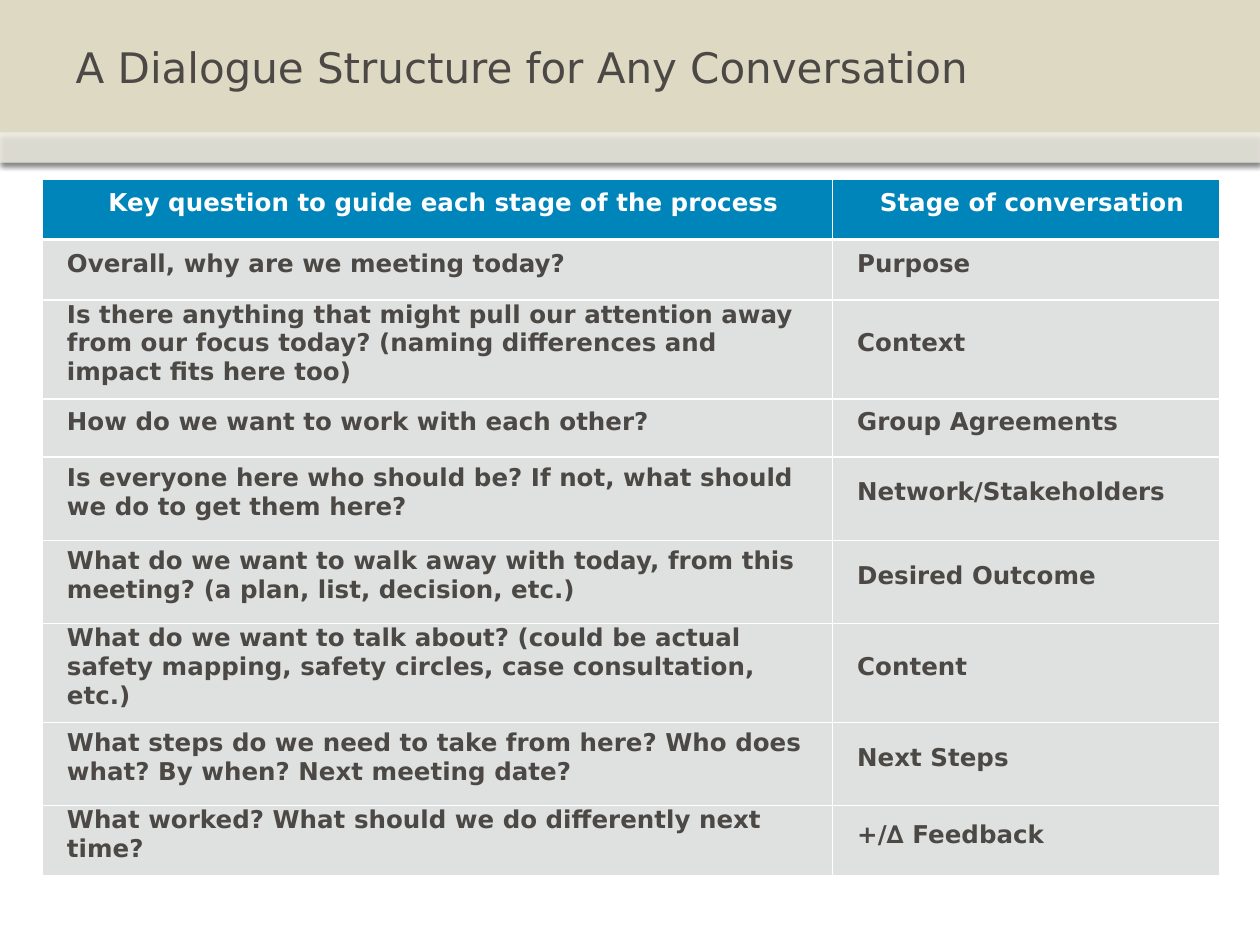
from lxml.etree import SubElement as Sub
from pptx import Presentation as Deck
from pptx.dml.color import RGBColor as Rgb
from pptx.enum.shapes import MSO_SHAPE as Shape
from pptx.enum.text import MSO_ANCHOR as Anchor, PP_ALIGN as Align
from pptx.oxml.ns import qn
from pptx.util import Cm, Pt

FONT = "DejaVu Sans"
HUES = {"sand": "DDD9C3", "white": "FFFFFF", "ink": "4C4845",
        "blue": "0085BA", "grey": "DEE1DF", "shade": "000000"}
COLS = (15.93, 7.8)
ROWS = [
    (1.22, "Key question to guide each stage of the process", "Stage of conversation"),
    (1.22, "Overall, why are we meeting today?", "Purpose"),
    (1.98, "Is there anything that might pull our attention away from our focus today? "
           "(naming differences and impact fits here too)", "Context"),
    (1.17, "How do we want to work with each other?", "Group Agreements"),
    (1.68, "Is everyone here who should be? If not, what should we do to get them here?",
     "Network/Stakeholders"),
    (1.68, "What do we want to walk away with today, from this meeting? "
           "(a plan, list, decision, etc.)", "Desired Outcome"),
    (1.98, "What do we want to talk about? (could be actual safety mapping, "
           "safety circles, case consultation, etc.)", "Content"),
    (1.68, "What steps do we need to take from here? Who does what? By when? "
           "Next meeting date?", "Next Steps"),
    (1.4, "What worked? What should we do differently next time?", "+/∆ Feedback"),
]


def tint(name):
    """Return the named colour."""
    return Rgb.from_string(HUES[name])


def add_hue(node, name, alpha=None):
    """Add a colour element, with its opacity in percent if given."""
    hue = Sub(node, qn("a:srgbClr"), val=HUES[name])
    if alpha is not None:
        Sub(hue, qn("a:alpha"), val=str(alpha * 1000))


def add_text(frame, text, size, hue, bold=False, align=Align.LEFT):
    """Write one run into the first paragraph of a frame."""
    para = frame.paragraphs[0]
    para.alignment = align
    run = para.add_run()
    run.text = text
    font = run.font
    font.name, font.size, font.bold = FONT, Pt(size), bold
    font.color.rgb = tint(hue)


def add_band(slide, box, hue, alpha=100):
    """Add a plain band with a soft shadow below it."""
    band = slide.shapes.add_shape(Shape.RECTANGLE, *map(Cm, box))
    band.fill.solid()
    band.fill.fore_color.rgb = tint(hue)
    band.line.fill.background()
    Sub(band.fill._xPr.find(".//" + qn("a:srgbClr")), qn("a:alpha"), val=str(alpha * 1000))
    band.shadow.inherit = False
    glow = Sub(band._element.spPr.find(qn("a:effectLst")), qn("a:outerShdw"),
               blurRad=str(Pt(3.1)), dist=str(Pt(1.8)), dir="5400000", rotWithShape="0")
    add_hue(glow, "shade", 35)


def add_head(slide, box):
    """Place the two bands and the title in the box."""
    left, top, width, height = box
    strip = 0.61
    add_band(slide, box, "sand")
    add_band(slide, (left, top + height - strip, width, strip), "white", 53)
    title = slide.shapes.title
    title.left, title.top = Cm(left + 1.27), Cm(top)
    title.width, title.height = Cm(width - 2.54), Cm(height - strip)
    title.text_frame.vertical_anchor = Anchor.MIDDLE
    add_text(title.text_frame, slide_title, 24, "ink")
    slide.shapes._spTree.append(title._element)


def add_edges(cell, row):
    """Draw white cell borders, thicker under the head row."""
    props = cell._tc.get_or_add_tcPr()
    thick = {"T": row == 1, "B": row == 0}
    for side in "LRTB":
        width = 2.25 if thick.get(side) else 1
        edge = Sub(props, qn("a:ln" + side), w=str(Pt(width)))
        add_hue(Sub(edge, qn("a:solidFill")), "white")


def add_grid(slide, box):
    """Place the table of questions and stages in the box."""
    grid = slide.shapes.add_table(len(ROWS), len(COLS), *map(Cm, box)).table
    for col, width in zip(grid.columns, COLS):
        col.width = Cm(width)
    for row, (height, *texts) in enumerate(ROWS):
        grid.rows[row].height = Cm(height)
        head = row == 0
        for col, text in enumerate(texts):
            cell = grid.cell(row, col)
            cell.vertical_anchor = Anchor.MIDDLE
            cell.margin_left, cell.margin_top = Cm(0.5), 0
            cell.margin_right = cell.margin_bottom = Cm(0.25)
            add_edges(cell, row)
            cell.fill.solid()
            cell.fill.fore_color.rgb = tint("blue" if head else "grey")
            add_text(cell.text_frame, text, 14, "white" if head else "ink", True,
                     Align.CENTER if head else Align.LEFT)


slide_title = "A Dialogue Structure for Any Conversation"


def main():
    """Build the slide and save it."""
    deck = Deck()
    deck.slide_width, deck.slide_height = Cm(25.4), Cm(19.05)
    slide = deck.slides.add_slide(deck.slide_layouts[5])
    add_head(slide, (0, 0, 25.4, 3.28))
    add_grid(slide, (0.85, 3.61, sum(COLS), sum(row[0] for row in ROWS)))
    deck.save("out.pptx")


if __name__ == "__main__":
    main()
